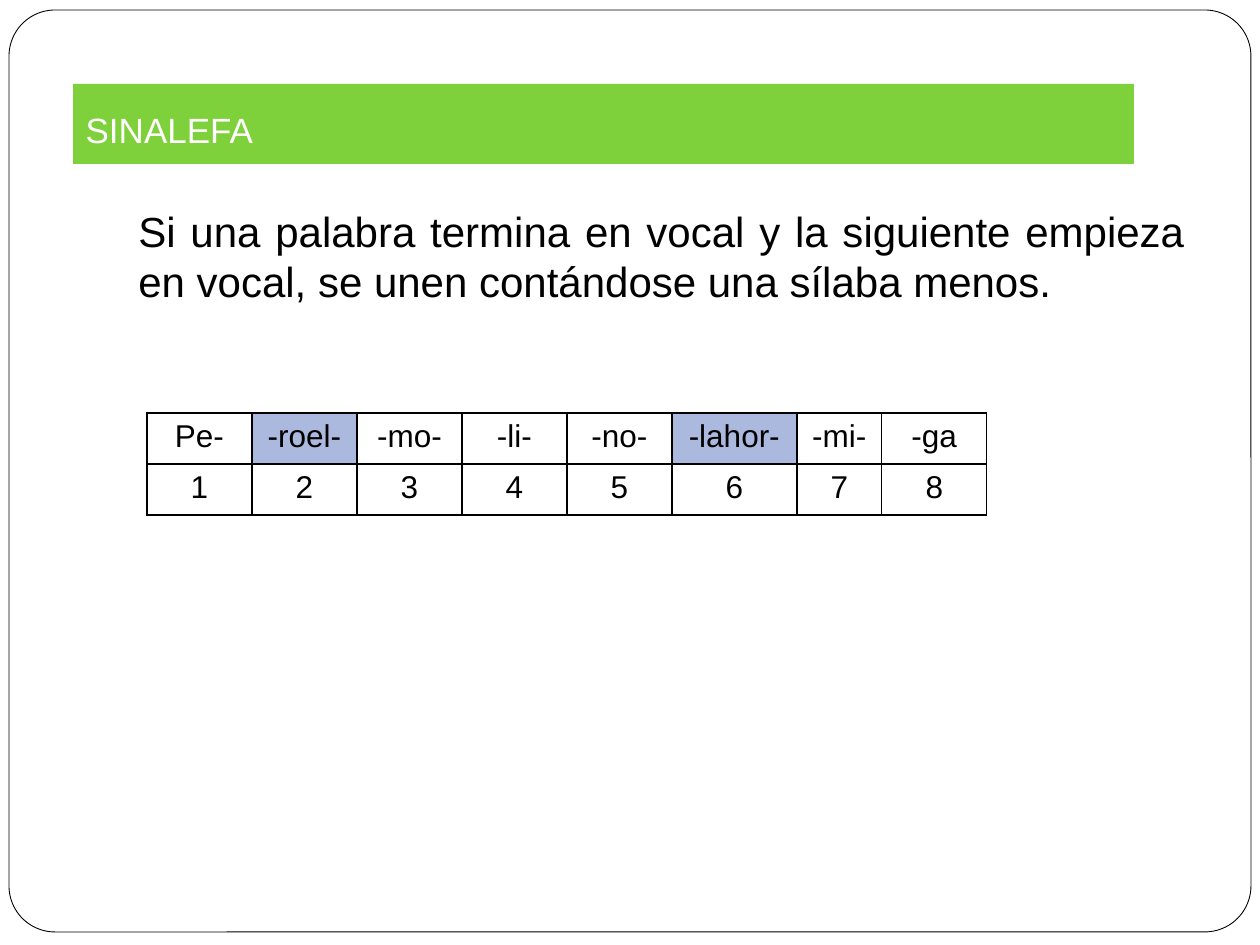
from dataclasses import dataclass

from lxml import etree
from pptx import Presentation
from pptx.dml.color import RGBColor
from pptx.enum.shapes import MSO_SHAPE
from pptx.enum.text import MSO_ANCHOR, PP_ALIGN
from pptx.oxml.ns import qn
from pptx.util import Emu, Pt

ROUNDED = MSO_SHAPE.ROUNDED_RECTANGLE
BOTTOM = MSO_ANCHOR.BOTTOM
LEFT, CENTER, JUSTIFY = PP_ALIGN.LEFT, PP_ALIGN.CENTER, PP_ALIGN.JUSTIFY
EMU_PER_PX = 914400 / 126
FONT = "Arial"
COLORS = {"paper": "FFFFFF", "ink": "000000", "banner": "7FD13B", "merged": "ABB9DE"}


@dataclass
class Box:
    left: int
    top: int
    width: int
    height: int

    def emu(self) -> tuple:
        return px(self.left), px(self.top), px(self.width), px(self.height)


@dataclass
class Syllable:
    text: str
    width: int = 105
    merged: bool = False


FRAME = Box(9, 10, 1242, 922)
BANNER = Box(73, 84, 1061, 80)
BODY = Box(126, 199, 1071, 630)
TABLE_LEFT, TABLE_TOP, ROW_HEIGHT = 147, 413, 51
SYLLABLES = [
    Syllable("Pe-"),
    Syllable("-roel-", merged=True),
    Syllable("-mo-"),
    Syllable("-li-"),
    Syllable("-no-"),
    Syllable("-lahor-", width=125, merged=True),
    Syllable("-mi-", width=85),
    Syllable("-ga"),
]


def px(n: int) -> Emu:
    return Emu(round(n * EMU_PER_PX))


def rgb(name: str) -> RGBColor:
    return RGBColor.from_string(COLORS[name])


def write(tf, text: str, size: int, color: str, align) -> None:
    tf.text = text
    p = tf.paragraphs[0]
    p.alignment = align
    r = p.runs[0]
    r.font.name = FONT
    r.font.size = Pt(size)
    r.font.color.rgb = rgb(color)


def add_frame(slide) -> None:
    sp = slide.shapes.add_shape(ROUNDED, *FRAME.emu())
    sp.adjustments[0] = 0.05
    sp.shadow.inherit = False
    sp.fill.solid()
    sp.fill.fore_color.rgb = rgb("paper")
    sp.line.color.rgb = rgb("ink")
    sp.line.width = Pt(0.5)


def format_title(slide) -> None:
    sp = slide.shapes.title
    sp.left, sp.top, sp.width, sp.height = BANNER.emu()
    sp.fill.solid()
    sp.fill.fore_color.rgb = rgb("banner")
    tf = sp.text_frame
    tf.vertical_anchor = BOTTOM
    tf.margin_bottom = px(13)
    write(tf, "SINALEFA", 20, "paper", LEFT)
    slide.shapes.element.append(sp.element)


def add_body(slide) -> None:
    tf = slide.shapes.add_textbox(*BODY.emu()).text_frame
    tf.word_wrap = True
    text = (
        "Si una palabra termina en vocal y la siguiente empieza "
        "en vocal, se unen contándose una sílaba menos."
    )
    write(tf, text, 24, "ink", JUSTIFY)
    tf.paragraphs[0].space_before = Pt(5.8)


def add_borders(cell) -> None:
    tc_pr = cell._tc.get_or_add_tcPr()
    for side in ("a:lnL", "a:lnR", "a:lnT", "a:lnB"):
        ln = etree.SubElement(tc_pr, qn(side), w=str(Pt(1)))
        fill = etree.SubElement(ln, qn("a:solidFill"))
        etree.SubElement(fill, qn("a:srgbClr"), val=COLORS["ink"])


def format_cell(cell, text: str, merged: bool) -> None:
    write(cell.text_frame, text, 18, "ink", CENTER)
    add_borders(cell)
    if merged:
        cell.fill.solid()
        cell.fill.fore_color.rgb = rgb("merged")
    else:
        cell.fill.background()


def add_syllable_table(slide) -> None:
    width = sum(s.width for s in SYLLABLES)
    box = Box(TABLE_LEFT, TABLE_TOP, width, 2 * ROW_HEIGHT)
    table = slide.shapes.add_table(2, len(SYLLABLES), *box.emu()).table
    table.first_row = False
    table.horz_banding = False
    for i, s in enumerate(SYLLABLES):
        table.columns[i].width = px(s.width)
        format_cell(table.cell(0, i), s.text, s.merged)
        format_cell(table.cell(1, i), str(i + 1), False)


def main() -> None:
    prs = Presentation()
    prs.slide_width, prs.slide_height = px(1260), px(945)
    slide = prs.slides.add_slide(prs.slide_layouts[5])
    add_frame(slide)
    add_body(slide)
    add_syllable_table(slide)
    format_title(slide)
    prs.save("out.pptx")


if __name__ == "__main__":
    main()
